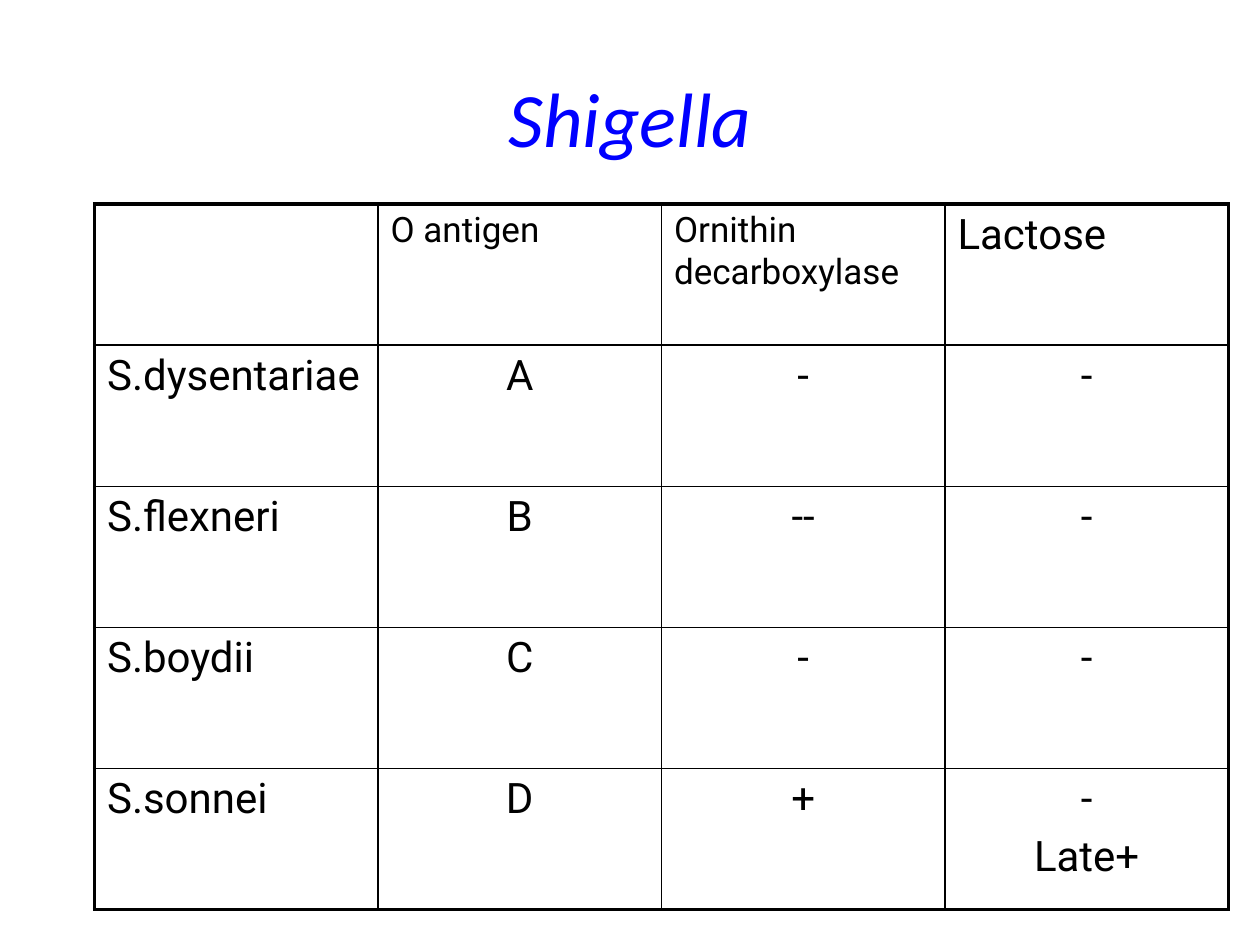
"""Build a slide with a table that compares four Shigella species."""

from lxml import etree
from pptx import Presentation
from pptx.dml.color import RGBColor
from pptx.enum.text import MSO_ANCHOR, PP_ALIGN
from pptx.oxml.ns import qn
from pptx.util import Inches, Pt

LEFT, CENTER = PP_ALIGN.LEFT, PP_ALIGN.CENTER
MIDDLE = MSO_ANCHOR.MIDDLE
TITLE_ONLY = 5
BLACK, BLUE = "000000", "0000FF"
INNER_LINE, OUTER_LINE = Pt(1), Pt(2.25)

ROWS = [
    ["", "O antigen", "Ornithin decarboxylase", "Lactose"],
    ["S.dysentariae", "A", "-", "-"],
    ["S.flexneri", "B", "--", "-"],
    ["S.boydii", "C", "-", "-"],
    ["S.sonnei", "D", "+", "-\nLate+"],
]


def write_text(text_frame, text, size=24, font="Roboto", color=BLACK,
               italic=False, align=LEFT, space_share=0.2):
    text_frame.text = text
    for paragraph in text_frame.paragraphs:
        paragraph.alignment = align
        paragraph.space_before = Pt(size * space_share)
        for run in paragraph.runs:
            run.font.size = Pt(size)
            run.font.name = font
            run.font.italic = italic
            run.font.color.rgb = RGBColor.from_string(color)


def add_border(cell, side, width):
    properties = cell._tc.get_or_add_tcPr()
    line = etree.SubElement(properties, qn(f"a:ln{side}"), w=str(width))
    fill = etree.SubElement(line, qn("a:solidFill"))
    etree.SubElement(fill, qn("a:srgbClr"), val=BLACK)


presentation = Presentation()
presentation.slide_width = Inches(10)
presentation.slide_height = Inches(7.5)
slide = presentation.slides.add_slide(presentation.slide_layouts[TITLE_ONLY])

title = slide.shapes.title
title.left, title.top = Inches(0.5), Inches(0.3)
title.width, title.height = Inches(9), Inches(1.25)
title.text_frame.vertical_anchor = MIDDLE
write_text(title.text_frame, "Shigella", size=44, font="Calibri",
           color=BLUE, italic=True, align=CENTER, space_share=0)

row_count, column_count = len(ROWS), len(ROWS[0])
table = slide.shapes.add_table(
    row_count, column_count, Inches(0.75), Inches(1.62), Inches(9), Inches(5.6)
).table
table.first_row = False
table.horz_banding = False

for row_index, row in enumerate(ROWS):
    for column_index, text in enumerate(row):
        cell = table.cell(row_index, column_index)
        is_header = row_index == 0
        is_small = is_header and column_index < column_count - 1
        write_text(cell.text_frame, text, size=20 if is_small else 24,
                   align=LEFT if is_header or column_index == 0 else CENTER)
        on_edge = {
            "L": column_index == 0,
            "R": column_index == column_count - 1,
            "T": is_header,
            "B": row_index == row_count - 1,
        }
        for side, is_outer in on_edge.items():
            add_border(cell, side, OUTER_LINE if is_outer else INNER_LINE)
        cell.fill.background()

presentation.save("out.pptx")
